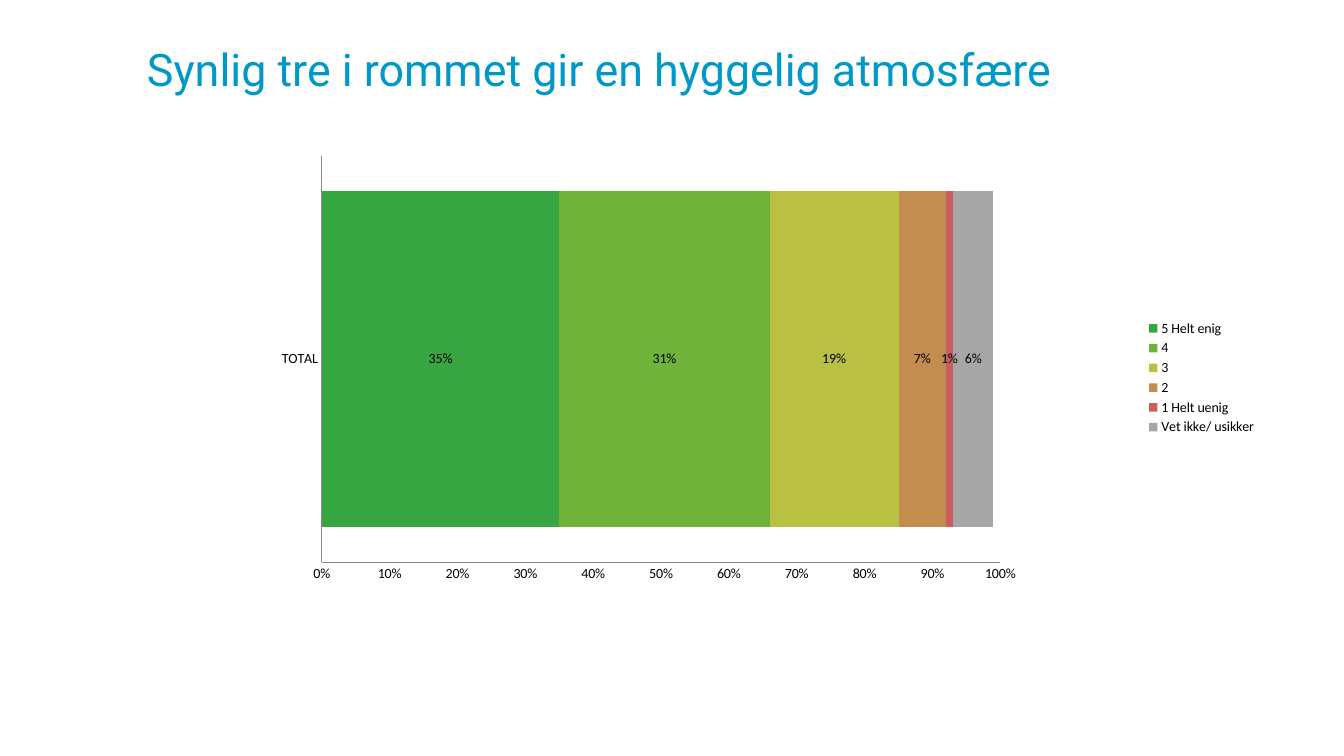
from lxml import etree
from pptx import Presentation
from pptx.chart.data import CategoryChartData
from pptx.dml.color import RGBColor
from pptx.enum.chart import XL_CHART_TYPE, XL_LABEL_POSITION, XL_LEGEND_POSITION, XL_TICK_MARK
from pptx.enum.text import MSO_ANCHOR, MSO_AUTO_SIZE, PP_ALIGN
from pptx.oxml import parse_xml
from pptx.oxml.ns import nsdecls, qn
from pptx.util import Cm, Pt

ANSWERS = [
    ("5 Helt enig", 0.35, "37A541"),
    ("4", 0.31, "6FB33B"),
    ("3", 0.19, "BAC042"),
    ("2", 0.07, "C48D50"),
    ("1 Helt uenig", 0.01, "C95E5E"),
    ("Vet ikke/ usikker", 0.06, "A6A6A6"),
]
PLOT_AREA = {"x": 0.206, "y": 0.07, "w": 0.57, "h": 0.788}


def color(hex_value):
    return RGBColor.from_string(hex_value)


def format_font(font, size, hex_value, name):
    font.color.rgb = color(hex_value)
    for attribute, value in {"size": Pt(size), "name": name, "bold": False}.items():
        setattr(font, attribute, value)


presentation = Presentation()
presentation.slide_width = Cm(33.87)
presentation.slide_height = Cm(19.05)
slide = presentation.slides.add_slide(presentation.slide_layouts[5])

# Title
title = slide.shapes.title
title_place = {"left": Cm(3.45), "top": Cm(0.15), "width": Cm(28.7), "height": Cm(3.18)}
for attribute, value in title_place.items():
    setattr(title, attribute, value)
title_frame = title.text_frame
title_frame.text = "Synlig tre i rommet gir en hyggelig atmosfære"
title_frame.vertical_anchor = MSO_ANCHOR.MIDDLE
title_frame.auto_size = MSO_AUTO_SIZE.NONE
title_paragraph = title_frame.paragraphs[0]
title_paragraph.alignment = PP_ALIGN.LEFT
format_font(title_paragraph.runs[0].font, 32, "0098C6", "Roboto")

# Stacked bar of answers
chart_data = CategoryChartData(number_format="0%")
chart_data.categories = ["TOTAL"]
for answer, share, _ in ANSWERS:
    chart_data.add_series(answer, [share])
chart = slide.shapes.add_chart(
    XL_CHART_TYPE.BAR_STACKED, Cm(1.93), Cm(3.02), Cm(30), Cm(13), chart_data
).chart
chart.has_title = False
format_font(chart.font, 18, "000000", "Calibri")

plot = chart.plots[0]
plot.gap_width = 21
plot.overlap = 100
plot.vary_by_categories = False
for series, (_, _, fill) in zip(plot.series, ANSWERS):
    series.format.fill.solid()
    series.format.fill.fore_color.rgb = color(fill)
    labels = series.data_labels
    labels.show_value = True
    labels.position = XL_LABEL_POSITION.CENTER
    labels.number_format = "0%"
    labels.number_format_is_linked = False
    format_font(labels.font, 10, "000000", "Calibri")

# Axes and legend
for axis in (chart.category_axis, chart.value_axis):
    axis.has_major_gridlines = False
    axis.major_tick_mark = axis.minor_tick_mark = XL_TICK_MARK.NONE
    axis.format.line.color.rgb = color("868686")
    axis.format.line.width = Pt(0.75)
    format_font(axis.tick_labels.font, 10, "000000", "Calibri")
value_axis = chart.value_axis
value_axis.minimum_scale = 0
value_axis.maximum_scale = 1
value_axis.major_unit = 0.1
value_axis.tick_labels.number_format = "0%"
value_axis.tick_labels.number_format_is_linked = False

chart.has_legend = True
chart.legend.position = XL_LEGEND_POSITION.RIGHT
chart.legend.include_in_layout = False
format_font(chart.legend.font, 10, "000000", "Calibri")

# Fixed inner plot area
plot_area = chart.element.find(".//" + qn("c:plotArea"))
for automatic_layout in plot_area.findall(qn("c:layout")):
    plot_area.remove(automatic_layout)
layout = parse_xml(f"<c:layout {nsdecls('c')}><c:manualLayout/></c:layout>")
settings = {"layoutTarget": "inner", "xMode": "edge", "yMode": "edge", **PLOT_AREA}
for tag, value in settings.items():
    etree.SubElement(layout[0], qn(f"c:{tag}")).set("val", str(value))
plot_area.insert(0, layout)

presentation.save("out.pptx")
